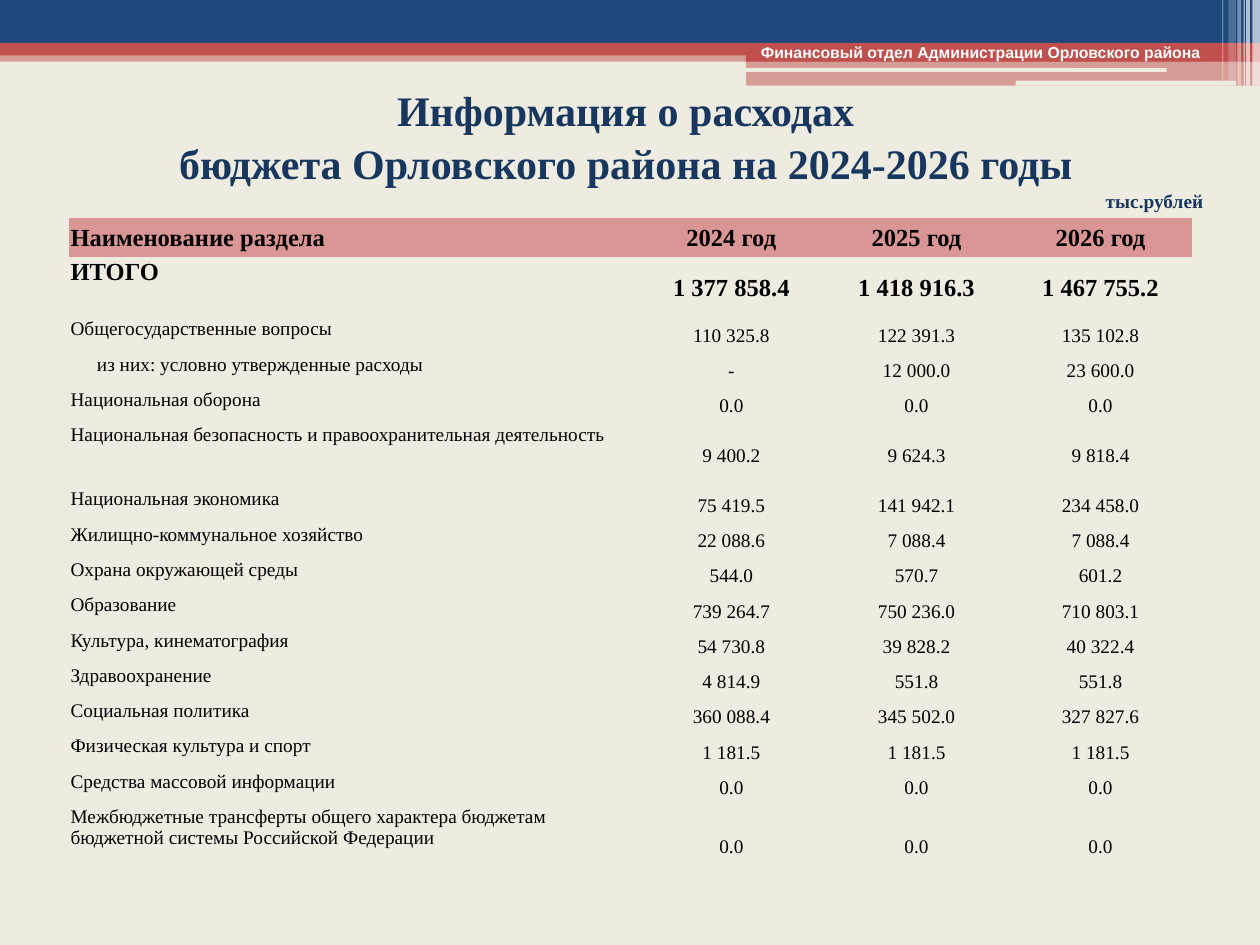
import pptx
import pptx.util
import pptx.dml.color
import pptx.enum.shapes
import pptx.enum.text
import pptx.oxml.ns
from lxml import etree

Inches = pptx.util.Inches
Pt = pptx.util.Pt
Align = pptx.enum.text.PP_ALIGN
Anchor = pptx.enum.text.MSO_ANCHOR
Shape = pptx.enum.shapes.MSO_SHAPE
qn = pptx.oxml.ns.qn

HUES = {"paper": "EEECE1", "blue": "1F497D", "red": "C0504D", "white": "FFFFFF",
        "navy": "17375E", "black": "000000", "pink": "D99694"}
SERIF = "Times New Roman"
PLAIN = "{2D5ABB26-0587-4C30-8999-92F81FD0307C}"

BANDS = [
    (0, 0.4, 10, 0.09, "red", 50),
    (0, 0, 10, 0.34, "blue", 100),
    (0, 0.34, 10, 0.1, "red", 100),
    (5.92, 0.39, 4.08, 0.1, "red", 100),
    (5.92, 0.48, 4.08, 0.2, "red", 50),
]
SLOTS = [(5.91, 0.54, 3.35, 0.03), (8.06, 0.64, 1.75, 0.04)]
STRIPES = [(9.94, 0.06, 0.68, 65), (9.89, 0.03, 0.68, 65), (9.87, 0.01, 0.68, 60),
           (9.82, 0.03, 0.68, 40), (9.75, 0.06, 0.64, 20), (9.7, 0.01, 0.64, 30)]

COLS = [4.52, 1.47, 1.47, 1.45]
STEP = 0.28
TALL = {0: 0.31, 1: 0.48, 5: 0.51, 15: 0.66}
ROWS = [
    ("Наименование раздела", "2024 год", "2025 год", "2026 год"),
    ("ИТОГО", "1 377 858.4", "1 418 916.3", "1 467 755.2"),
    ("Общегосударственные вопросы", "110 325.8", "122 391.3", "135 102.8"),
    ("из них: условно утвержденные расходы", "-", "12 000.0", "23 600.0"),
    ("Национальная оборона", "0.0", "0.0", "0.0"),
    ("Национальная безопасность и правоохранительная деятельность",
     "9 400.2", "9 624.3", "9 818.4"),
    ("Национальная экономика", "75 419.5", "141 942.1", "234 458.0"),
    ("Жилищно-коммунальное хозяйство", "22 088.6", "7 088.4", "7 088.4"),
    ("Охрана окружающей среды", "544.0", "570.7", "601.2"),
    ("Образование", "739 264.7", "750 236.0", "710 803.1"),
    ("Культура, кинематография", "54 730.8", "39 828.2", "40 322.4"),
    ("Здравоохранение", "4 814.9", "551.8", "551.8"),
    ("Социальная политика", "360 088.4", "345 502.0", "327 827.6"),
    ("Физическая культура и спорт", "1 181.5", "1 181.5", "1 181.5"),
    ("Средства массовой информации", "0.0", "0.0", "0.0"),
    ("Межбюджетные трансферты общего характера бюджетам бюджетной системы "
     "Российской Федерации", "0.0", "0.0", "0.0"),
]


def paint(fill, hue):
    fill.solid()
    fill.fore_color.rgb = pptx.dml.color.RGBColor.from_string(HUES[hue])


def style(para, size, hue, bold=False, face=SERIF, align=Align.LEFT):
    para.alignment = align
    para.font.size = Pt(size)
    para.font.bold = bold
    para.font.name = face
    para.font.color.rgb = pptx.dml.color.RGBColor.from_string(HUES[hue])


def add_bar(slide, left, top, width, height, hue, solid=100, kind=Shape.RECTANGLE):
    bar = slide.shapes.add_shape(
        kind, Inches(left), Inches(top), Inches(width), Inches(height))
    bar.shadow.inherit = False
    bar.line.fill.background()
    paint(bar.fill, hue)
    if solid < 100:
        tone = bar.fill._xPr.find(qn("a:solidFill"))[0]
        etree.SubElement(tone, qn("a:alpha"), val=str(solid * 1000))


def add_banner(slide):
    for band in BANDS:
        add_bar(slide, *band)
    for slot in SLOTS:
        add_bar(slide, *slot, "paper", kind=Shape.ROUNDED_RECTANGLE)
    for left, width, height, solid in STRIPES:
        add_bar(slide, left, 0, width, height, "white", solid)
    box = slide.shapes.add_textbox(Inches(5.94), Inches(0.29), Inches(3.91), Inches(0.25))
    box.text_frame.word_wrap = True
    para = box.text_frame.paragraphs[0]
    para.text = "Финансовый отдел Администрации Орловского района"
    style(para, 9, "white", True, "Arial")


def set_title(slide):
    title = slide.shapes.title
    title.left, title.top = Inches(0.28), Inches(0.6)
    title.width, title.height = Inches(9.37), Inches(1.09)
    frame = title.text_frame
    frame.word_wrap = True
    frame.auto_size = pptx.enum.text.MSO_AUTO_SIZE.NONE
    frame.vertical_anchor = Anchor.TOP
    frame.text = ("Информация о расходах\n"
                  "бюджета Орловского района на 2024-2026 годы\nтыс.рублей")
    looks = [(24, Align.CENTER), (24, Align.CENTER), (11, Align.RIGHT)]
    for para, (size, align) in zip(frame.paragraphs, looks):
        para.line_spacing = 1.05
        para.space_before = Pt(0)
        style(para, size, "navy", True, align=align)


def fill_cell(cell, text, row, col):
    label = col == 0
    cell.text = text
    cell.margin_left = Inches(0.22 if label and row == 3 else 0.01)
    cell.margin_right = Inches(0.15 if label else 0.01)
    cell.margin_top = Inches(0.01)
    cell.margin_bottom = 0
    cell.vertical_anchor = Anchor.TOP if label and row else Anchor.MIDDLE
    if row == 0:
        paint(cell.fill, "pink")
    else:
        cell.fill.background()
    head = row < 2
    style(cell.text_frame.paragraphs[0], 14 if head else 11, "black", head,
          align=Align.LEFT if label else Align.CENTER)


def add_budget(slide):
    highs = [TALL.get(row, STEP) for row in range(len(ROWS))]
    frame = slide.shapes.add_table(
        len(ROWS), len(COLS), Inches(0.55), Inches(1.73),
        Inches(sum(COLS)), Inches(sum(highs)))
    table = frame.table
    table.first_row = table.horz_banding = False
    table._tbl.tblPr.find(qn("a:tableStyleId")).text = PLAIN
    for col, width in enumerate(COLS):
        table.columns[col].width = Inches(width)
    for row, texts in enumerate(ROWS):
        table.rows[row].height = Inches(highs[row])
        for col, text in enumerate(texts):
            fill_cell(table.cell(row, col), text, row, col)


def main():
    deck = pptx.Presentation()
    deck.slide_width, deck.slide_height = Inches(10), Inches(7.5)
    slide = deck.slides.add_slide(deck.slide_layouts[5])
    paint(slide.background.fill, "paper")
    add_banner(slide)
    set_title(slide)
    add_budget(slide)
    deck.save("out.pptx")


if __name__ == "__main__":
    main()
